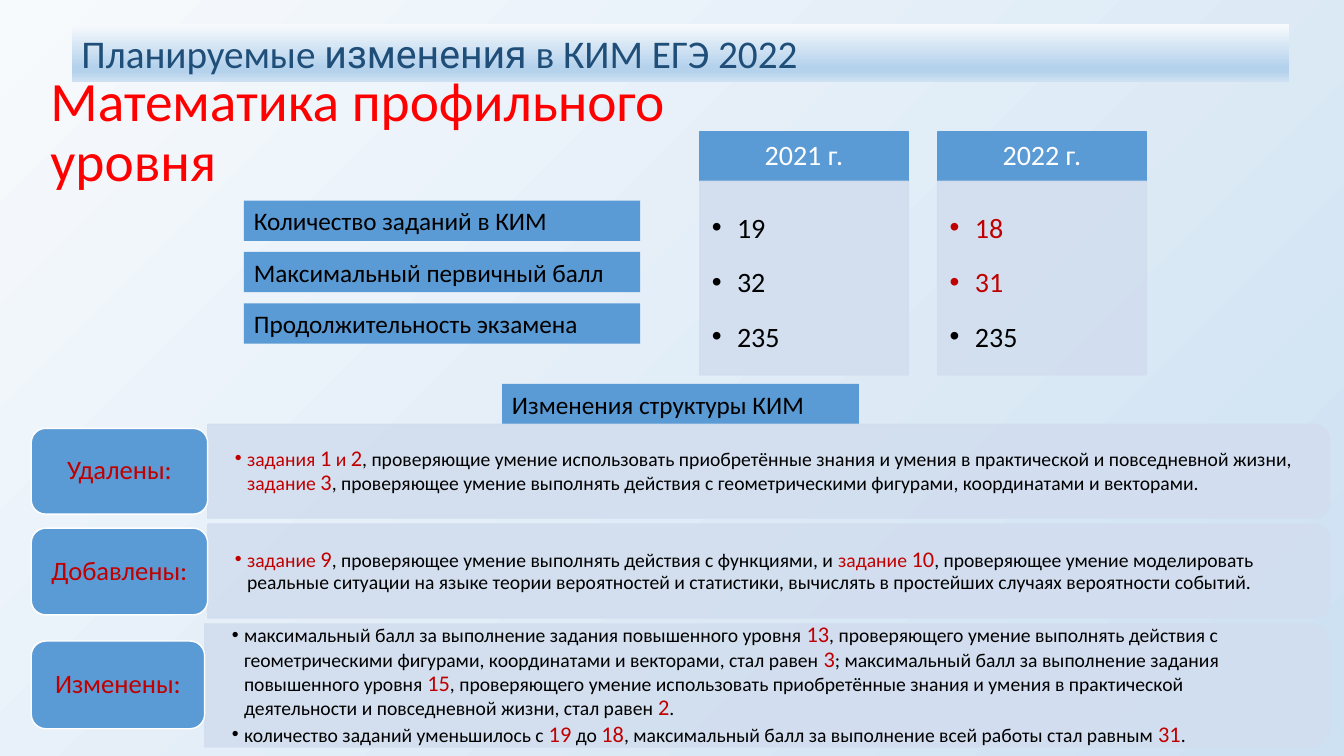
"""Build the slide on planned changes to the 2022 maths exam."""
from copy import deepcopy

from lxml.etree import SubElement
from pptx import Presentation
from pptx.dml.color import RGBColor
from pptx.enum.shapes import MSO_SHAPE
from pptx.enum.text import MSO_ANCHOR, PP_ALIGN
from pptx.oxml.ns import qn
from pptx.util import Pt

PX = 9144
BLUE = RGBColor(0x5B, 0x9B, 0xD5)
PALE = RGBColor(0xD2, 0xDE, 0xEF)
NAVY = RGBColor(0x1F, 0x4E, 0x79)
RED = RGBColor(0xFF, 0x00, 0x00)
WINE = RGBColor(0xC0, 0x00, 0x00)
BLACK = RGBColor(0x00, 0x00, 0x00)
WHITE = RGBColor(0xFF, 0xFF, 0xFF)
MIST = RGBColor(0xF7, 0xFA, 0xFD)
SKY = RGBColor(0xB5, 0xD2, 0xEC)
ICE = RGBColor(0xCE, 0xE1, 0xF2)

deck = Presentation()
deck.slide_width, deck.slide_height = 1333 * PX, 750 * PX
slide = deck.slides.add_slide(deck.slide_layouts[5])


def box(kind, x, y, w, h, color, line=None, alpha=None):
    """Add a flat filled shape."""
    shape = slide.shapes.add_shape(kind, x * PX, y * PX, w * PX, h * PX)
    shape.shadow.inherit = False
    shape.fill.solid()
    shape.fill.fore_color.rgb = color
    if line is None:
        shape.line.fill.background()
    else:
        shape.line.color.rgb = line
        shape.line.width = Pt(1)
    if alpha:
        for tint in shape.element.spPr.iter(qn("a:srgbClr")):
            SubElement(tint, qn("a:alpha"), val=str(alpha * 1000))
    return shape


def write(shape, paras, inset=(10, 5, 10, 5), align=PP_ALIGN.LEFT,
          anchor=MSO_ANCHOR.MIDDLE, gap=1.0, after=0, dent=0):
    """Fill a shape with paragraphs of (text, size, color, font) runs."""
    frame = shape.text_frame
    frame.word_wrap = True
    frame.vertical_anchor = anchor
    (frame.margin_left, frame.margin_top,
     frame.margin_right, frame.margin_bottom) = [n * PX for n in inset]
    for i, runs in enumerate(paras):
        para = frame.add_paragraph() if i else frame.paragraphs[0]
        para.alignment = align
        para.line_spacing = gap
        para.space_before, para.space_after = Pt(0), Pt(after)
        if dent:
            props = para._p.get_or_add_pPr()
            props.set("marL", str(dent * PX))
            props.set("indent", str(-dent * PX))
            SubElement(props, qn("a:buFont"), typeface="Arial")
            SubElement(props, qn("a:buChar"), char="•")
        for text, size, color, *font in runs:
            run = para.add_run()
            run.text = text
            run.font.size = Pt(size)
            run.font.name = font[0] if font else "Calibri"
            run.font.color.rgb = color


title = slide.shapes.title
title.left, title.top, title.width, title.height = [
    n * PX for n in (40, 93, 682, 79)]
write(title, [[("Математика профильного уровня", 39.6, RED)]], gap=0.9)

banner = box(MSO_SHAPE.RECTANGLE, 71, 24, 1208, 57, SKY)
write(banner, [[("Планируемые ", 28, NAVY), ("изменения", 28, NAVY, "Roboto"),
                (" в КИМ ЕГЭ 2022", 28, NAVY)]])

for fill, root, angle, stops in (
        (slide.background.fill, slide.element, 45, [(0, MIST), (97, ICE)]),
        (banner.fill, banner.element, 90,
         [(0, MIST), (74, SKY), (83, SKY), (100, ICE)])):
    fill.gradient()
    fill.gradient_angle = 360 - angle
    group = next(root.iter(qn("a:gsLst")))
    while len(group) < len(stops):
        group.append(deepcopy(group[0]))
    for stop, (place, color) in zip(fill.gradient_stops, stops):
        stop.position = place / 100
        stop.color.rgb = color

labels = [(242, 199 + 51 * i, 393, text) for i, text in enumerate((
    "Количество заданий в КИМ", "Максимальный первичный балл",
    "Продолжительность экзамена"))]
labels.append((498, 381, 354, "Изменения структуры КИМ"))
for x, y, w, text in labels:
    write(box(MSO_SHAPE.RECTANGLE, x, y, w, 40, BLUE), [[(text, 18, BLACK)]])

years = [("2021 г.", [("19", BLACK), ("32", BLACK), ("235", BLACK)]),
         ("2022 г.", [("18", WINE), ("31", WINE), ("235", BLACK)])]
for i, (year, marks) in enumerate(years):
    x = 694 + 236 * i
    head = box(MSO_SHAPE.RECTANGLE, x, 131, 207, 49, BLUE, BLUE)
    write(head, [[(year, 20, WHITE)]], (16, 9, 16, 9), PP_ALIGN.CENTER, gap=0.9)
    body = box(MSO_SHAPE.RECTANGLE, x, 180, 207, 192, PALE, PALE, 90)
    write(body, [[(text, 20, color)] for text, color in marks],
          (12, 12, 16, 17), anchor=MSO_ANCHOR.TOP, gap=1.5, after=3, dent=25)

INK, KEY, NUM = (14, BLACK), (14, WINE), (16, WINE)
rows = [
    ("Удалены:", 206, 421, 93, 425, 85, [[
        ("задания ", *KEY), ("1", *NUM), (" и ", *KEY), ("2", *NUM),
        (", проверяющие умение использовать приобретённые знания и умения "
         "в практической и повседневной жизни, ", *INK),
        ("задание ", *KEY), ("3", *NUM),
        (", проверяющее умение выполнять действия с геометрическими "
         "фигурами, координатами и векторами.", *INK)]]),
    ("Добавлены:", 206, 520, 93, 524, 86, [[
        ("задание ", *KEY), ("9", *NUM),
        (", проверяющее умение выполнять действия с функциями, и ", *INK),
        ("задание ", *KEY), ("10", *NUM),
        (", проверяющее умение моделировать реальные ситуации на языке "
         "теории вероятностей и статистики, вычислять в простейших случаях "
         "вероятности событий.", *INK)]]),
    ("Изменены:", 203, 619, 122, 636, 87, [[
        ("максимальный балл за выполнение задания повышенного уровня ", *INK),
        ("13", *NUM),
        (", проверяющего умение выполнять действия с геометрическими "
         "фигурами, координатами и векторами, стал равен ", *INK),
        ("3", *NUM),
        ("; максимальный балл за выполнение задания повышенного уровня ", *INK),
        ("15", *NUM),
        (", проверяющего умение использовать приобретённые знания и умения "
         "в практической деятельности и повседневной жизни, стал равен ", *INK),
        ("2", *NUM), (".", *INK)], [
        ("количество заданий уменьшилось с ", *INK), ("19", *NUM),
        (" до ", *INK), ("18", *NUM),
        (", максимальный балл за выполнение всей работы стал равным ", *INK),
        ("31", *NUM), (".", *INK)]]),
]
for name, x, y, h, top, tall, paras in rows:
    w = 1319 - x
    panel = box(MSO_SHAPE.ROUND_2_SAME_RECTANGLE, x + (w - h) // 2,
                y + (h - w) // 2, h, w, PALE, PALE, 90)
    panel.rotation = 90
    note = slide.shapes.add_textbox(x * PX, (y + 5) * PX,
                                    (w - 5) * PX, (h - 10) * PX)
    write(note, paras, (27, 14, 27, 14), gap=0.9, after=2, dent=12)
    tag = box(MSO_SHAPE.ROUNDED_RECTANGLE, 31, top, x - 31, tall, BLUE, WHITE)
    write(tag, [[(name, 19, WINE)]], (8, 4, 8, 4), PP_ALIGN.CENTER, gap=0.9)

deck.save("out.pptx")
